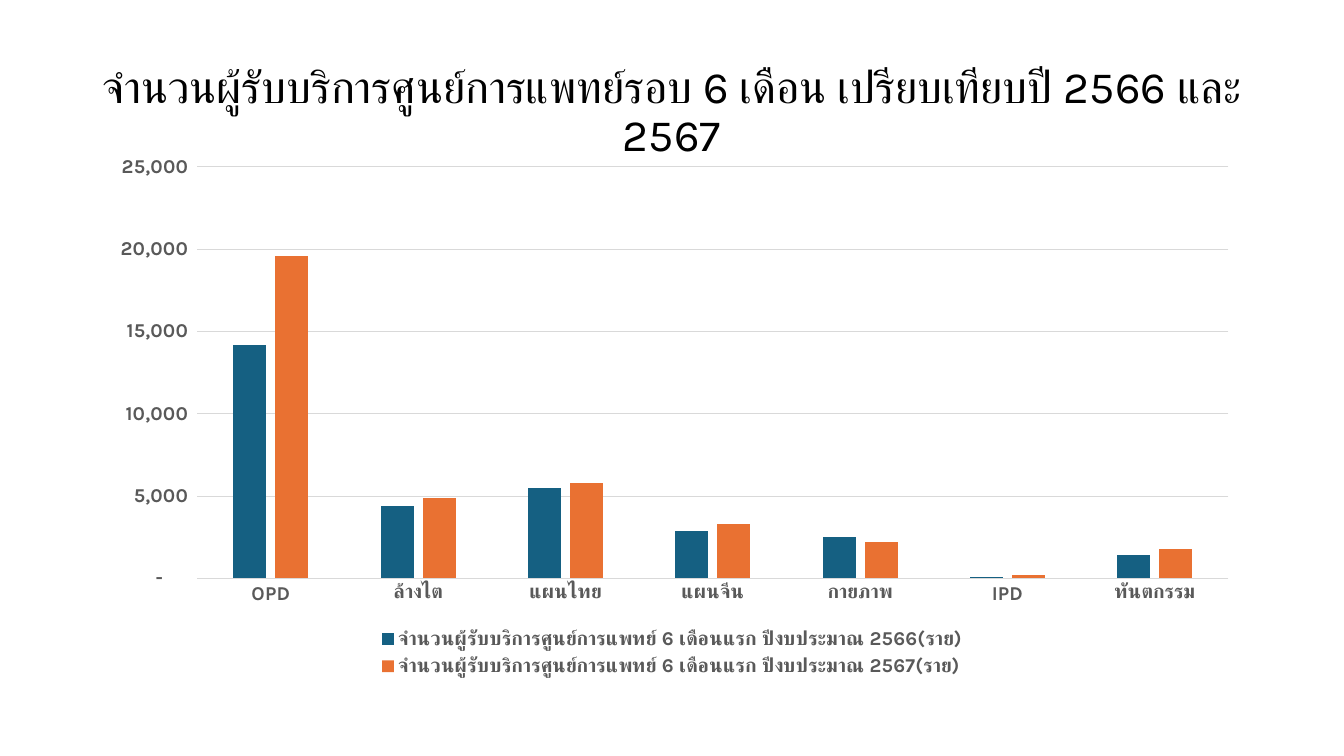
"""Build a slide comparing six-month patient numbers at a medical centre in two years."""
from pptx import Presentation
from pptx.chart.data import CategoryChartData
from pptx.dml.color import RGBColor
from pptx.enum.chart import XL_CHART_TYPE, XL_LEGEND_POSITION, XL_TICK_MARK
from pptx.enum.text import MSO_ANCHOR, PP_ALIGN
from pptx.util import Cm, Pt

TITLE = "จำนวนผู้รับบริการศูนย์การแพทย์รอบ 6 เดือน เปรียบเทียบปี 2566 และ 2567"
CLINICS = ["OPD", "ล้างไต", "แผนไทย", "แผนจีน", "กายภาพ", "IPD", "ทันตกรรม"]
BLUE = RGBColor(0x15, 0x60, 0x82)
ORANGE = RGBColor(0xE9, 0x71, 0x32)
BLACK = RGBColor(0, 0, 0)
GREY = RGBColor(0x59, 0x59, 0x59)
LIGHT_GREY = RGBColor(0xD9, 0xD9, 0xD9)
YEARS = [
    ("จำนวนผู้รับบริการศูนย์การแพทย์ 6 เดือนแรก ปีงบประมาณ 2566(ราย)",
     [14200, 4400, 5500, 2900, 2500, 100, 1400], BLUE),
    ("จำนวนผู้รับบริการศูนย์การแพทย์ 6 เดือนแรก ปีงบประมาณ 2567(ราย)",
     [19600, 4900, 5800, 3300, 2200, 200, 1800], ORANGE),
]
FONT = "Karla"
NUMBER_FORMAT = '_(* #,##0_);_(* \\(#,##0\\);_(* "-"??_);_('
LEFT, WIDTH = Cm(2.33), Cm(29.21)


def style_font(font, size, color, bold=False):
    font.name = FONT
    font.size = Pt(size)
    font.bold = bold
    font.color.rgb = color


def style_line(line):
    line.color.rgb = LIGHT_GREY
    line.width = Pt(0.75)


def add_title(page):
    box = page.shapes.add_textbox(LEFT, Cm(1.01), WIDTH, Cm(3.68))
    frame = box.text_frame
    frame.word_wrap = True
    frame.vertical_anchor = MSO_ANCHOR.MIDDLE
    para = frame.paragraphs[0]
    para.alignment = PP_ALIGN.CENTER
    para.line_spacing = 0.9
    span = para.add_run()
    span.text = TITLE
    style_font(span.font, 32, BLACK)


def add_patient_chart(page):
    data = CategoryChartData(number_format=NUMBER_FORMAT)
    data.categories = CLINICS
    for name, values, _ in YEARS:
        data.add_series(name, values)
    chart = page.shapes.add_chart(XL_CHART_TYPE.COLUMN_CLUSTERED,
                                  LEFT, Cm(3.64), WIDTH, Cm(13.54), data).chart
    chart.has_title = False
    style_font(chart.font, 10, BLACK)

    plot = chart.plots[0]
    plot.vary_by_categories = False
    plot.gap_width = 219
    plot.overlap = -27
    for series, (_, _, color) in zip(plot.series, YEARS):
        series.format.fill.solid()
        series.format.fill.fore_color.rgb = color
        series.invert_if_negative = False

    for axis in (chart.category_axis, chart.value_axis):
        axis.major_tick_mark = axis.minor_tick_mark = XL_TICK_MARK.NONE
        style_font(axis.tick_labels.font, 14, GREY, True)
    style_line(chart.category_axis.format.line)
    values_axis = chart.value_axis
    values_axis.minimum_scale, values_axis.maximum_scale = 0, 25000
    values_axis.major_unit = 5000
    values_axis.format.line.fill.background()
    values_axis.tick_labels.number_format = NUMBER_FORMAT
    values_axis.tick_labels.number_format_is_linked = False
    style_line(values_axis.major_gridlines.format.line)

    chart.has_legend = True
    chart.legend.position = XL_LEGEND_POSITION.BOTTOM
    chart.legend.include_in_layout = False
    style_font(chart.legend.font, 14, GREY, True)


def main():
    deck = Presentation()
    deck.slide_width, deck.slide_height = Cm(33.87), Cm(19.05)
    page = deck.slides.add_slide(deck.slide_layouts[6])
    add_title(page)
    add_patient_chart(page)
    deck.save("out.pptx")


if __name__ == "__main__":
    main()
